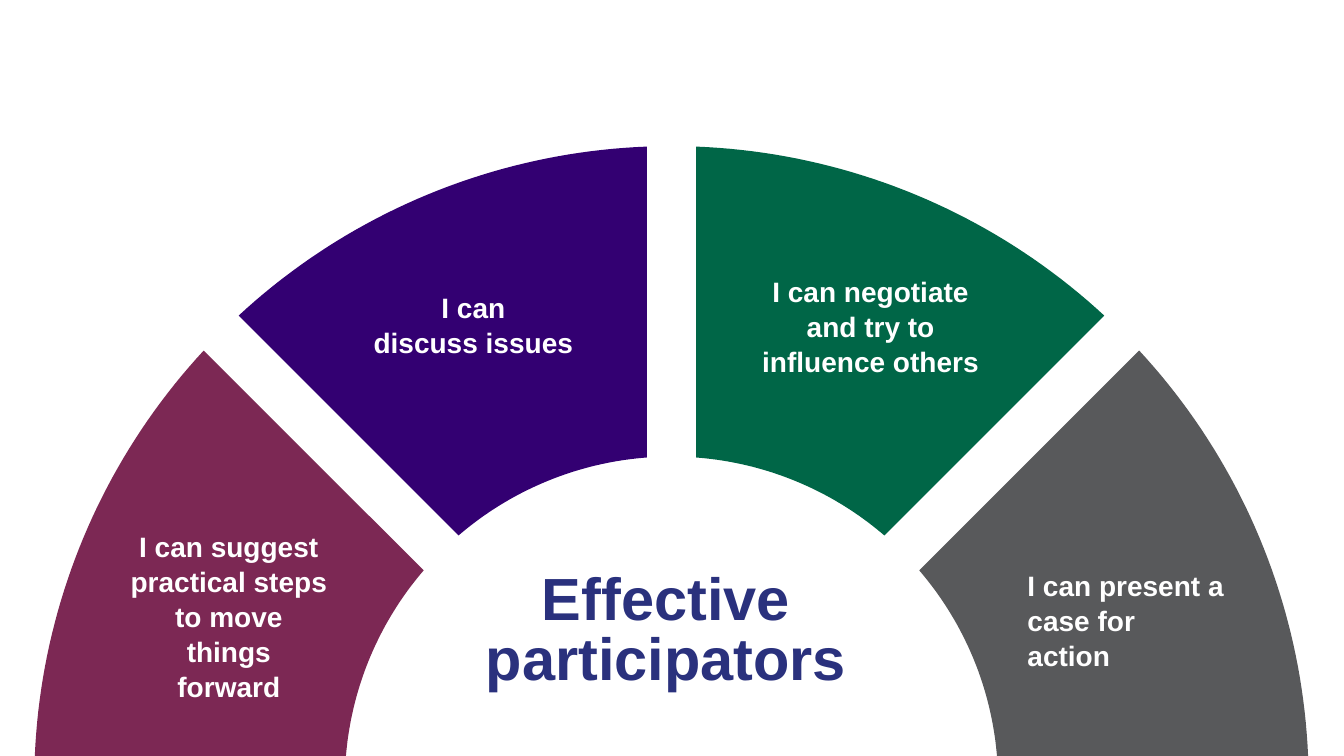
import math
from pptx import Presentation
from pptx import util as u
from pptx.dml.color import RGBColor
from pptx.enum import text

WHITE = RGBColor(0xFF, 0xFF, 0xFF)
NAVY = RGBColor(0x2A, 0x31, 0x7D)
PLUM = RGBColor(0x7C, 0x28, 0x54)
INDIGO = RGBColor(0x33, 0x00, 0x72)
GREEN = RGBColor(0x00, 0x66, 0x47)
GREY = RGBColor(0x58, 0x59, 0x5B)

TITLE = ["Effective", "participators"]
TITLE_BOX = (4.8, 5.55, 3.61, 1.34)
CENTRED, LEFT = text.PP_ALIGN.CENTER, text.PP_ALIGN.LEFT
SKILLS = [
    (PLUM, ["I can suggest", "practical steps", "to move", "things", "forward"],
     (1.27, 5.22, 2, 1.7), CENTRED),
    (INDIGO, ["I can", "discuss issues"], (3.69, 2.85, 2.01, 0.69), CENTRED),
    (GREEN, ["I can negotiate", "and try to", "influence others"],
     (7.55, 2.69, 2.17, 1.03), CENTRED),
    (GREY, ["I can present a", "case for", "action"],
     (10.19, 5.61, 1.99, 1.03), LEFT),
]

CENTRE_X, CENTRE_Y = 6.66, 7.77
OUTER, INNER = 6.32, 3.24
GAP, BASE_GAP = 0.49, 0.54
SWEEP = 180 / len(SKILLS)
ARC_STEPS = 40

prs = Presentation()
prs.slide_width, prs.slide_height = u.Inches(13.33), u.Inches(7.5)
slide = prs.slides.add_slide(prs.slide_layouts[6])


def arc(radius, spokes):
    (first, first_gap), (last, last_gap) = spokes
    start = math.radians(first) - math.asin(first_gap / 2 / radius)
    end = math.radians(last) + math.asin(last_gap / 2 / radius)
    angles = [start + (end - start) * i / ARC_STEPS for i in range(ARC_STEPS + 1)]
    return [(u.Inches(CENTRE_X + radius * math.cos(a)),
             u.Inches(CENTRE_Y - radius * math.sin(a))) for a in angles]


def add_segment(spokes, color):
    outline = arc(OUTER, spokes) + arc(INNER, spokes)[::-1]
    builder = slide.shapes.build_freeform(*outline[0])
    builder.add_line_segments(outline[1:], close=True)
    segment = builder.convert_to_shape()
    segment.shadow.inherit = False
    segment.fill.solid()
    segment.fill.fore_color.rgb = color
    segment.line.fill.background()


def add_text(lines, box, size=20, color=WHITE, align=CENTRED, spacing=1.04, top=0.02):
    frame = slide.shapes.add_textbox(*map(u.Inches, box)).text_frame
    frame.word_wrap = True
    frame.margin_left = frame.margin_right = frame.margin_bottom = 0
    frame.margin_top = u.Inches(top)
    paragraph = frame.paragraphs[0]
    paragraph.alignment = align
    paragraph.line_spacing = spacing
    for number, line in enumerate(lines):
        if number:
            paragraph.add_line_break()
        run = paragraph.add_run()
        run.text = line
        run.font.name = "Arial"
        run.font.size = u.Pt(size)
        run.font.bold = True
        run.font.color.rgb = color


spokes = [(180 - SWEEP * i, GAP) for i in range(len(SKILLS) + 1)]
spokes[0], spokes[-1] = (180, BASE_GAP), (0, BASE_GAP)

for i, (color, lines, box, align) in enumerate(SKILLS):
    add_segment(spokes[i:i + 2], color)
    add_text(lines, box, align=align)
add_text(TITLE, TITLE_BOX, size=42.5, color=NAVY, spacing=u.Pt(43), top=0.13)

prs.save("out.pptx")
